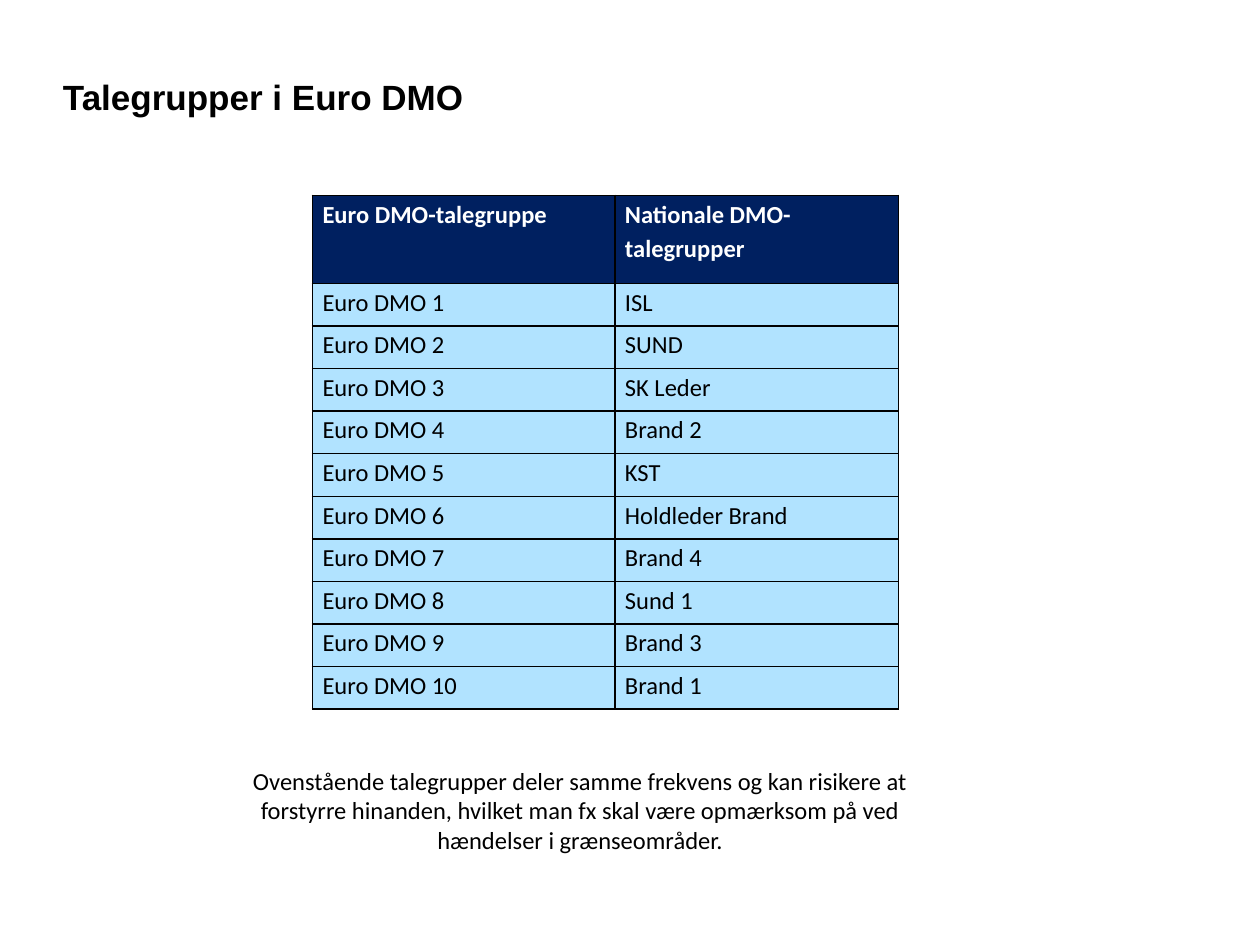
"""Build a slide listing the Euro DMO talk groups and their national counterparts."""
from dataclasses import dataclass

from lxml import etree
from pptx import Presentation
from pptx import util as u
from pptx.dml.color import RGBColor
from pptx.enum import text
from pptx.oxml.ns import qn

COLOURS = {"ink": "000000", "white": "FFFFFF", "navy": "002060", "sky": "B1E3FF"}
HEADINGS = ("Euro DMO-talegruppe", "Nationale DMO-talegrupper")
NATIONAL_GROUPS = (
    "ISL", "SUND", "SK Leder", "Brand 2", "KST",
    "Holldeder Brand".replace("Holldeder", "Holdleder"), "Brand 4", "Sund 1", "Brand 3", "Brand 1",
)
COLUMN_WIDTHS = (2.4, 2.25)
TABLE_HEIGHT = 4.08
HEADER_HEIGHT = 0.7


@dataclass(frozen=True)
class Area:
    left: float
    top: float
    width: float
    height: float

    def lengths(self):
        return [u.Inches(side) for side in (self.left, self.top, self.width, self.height)]


@dataclass(frozen=True)
class RowStyle:
    fill: str
    colour: str
    bold: bool


HEADER_STYLE = RowStyle("navy", "white", True)
BODY_STYLE = RowStyle("sky", "ink", False)


def write(frame, words: str, *, size=14, font="Calibri", colour="ink", bold=False,
          align=text.PP_ALIGN.LEFT, line_spacing=1.0) -> None:
    frame.word_wrap = True
    para = frame.paragraphs[0]
    para.alignment = align
    para.line_spacing = line_spacing
    span = para.add_run()
    span.text = words
    span.font.size = u.Pt(size)
    span.font.name = font
    span.font.bold = bold
    span.font.color.rgb = RGBColor.from_string(COLOURS[colour])


def add_text(page, area: Area, words: str, **style) -> None:
    frame = page.shapes.add_textbox(*area.lengths()).text_frame
    frame.margin_left = frame.margin_top = frame.margin_right = frame.margin_bottom = 0
    frame.vertical_anchor = text.MSO_ANCHOR.TOP
    write(frame, words, **style)


def add_borders(cell) -> None:
    properties = cell._tc.get_or_add_tcPr()
    for index, side in enumerate(("lnL", "lnR", "lnT", "lnB")):
        line = etree.Element(qn(f"a:{side}"), w=str(u.Pt(1)))
        fill = etree.SubElement(line, qn("a:solidFill"))
        etree.SubElement(fill, qn("a:srgbClr"), val=COLOURS["ink"])
        properties.insert(index, line)


def fill_cell(cell, words: str, style: RowStyle) -> None:
    cell.margin_left = cell.margin_right = u.Inches(0.08)
    cell.margin_top = cell.margin_bottom = 0
    cell.vertical_anchor = text.MSO_ANCHOR.TOP
    cell.fill.solid()
    cell.fill.fore_color.rgb = RGBColor.from_string(COLOURS[style.fill])
    add_borders(cell)
    write(cell.text_frame, words, colour=style.colour, bold=style.bold, line_spacing=1.15)


def add_group_table(page) -> None:
    groups = [(f"Euro DMO {number}", name) for number, name in enumerate(NATIONAL_GROUPS, 1)]
    rows = [HEADINGS, *groups]
    area = Area(2.48, 1.55, sum(COLUMN_WIDTHS), TABLE_HEIGHT)
    table = page.shapes.add_table(len(rows), len(HEADINGS), *area.lengths()).table
    table.horz_banding = False
    for column, width in zip(table.columns, COLUMN_WIDTHS):
        column.width = u.Inches(width)
    body_height = (TABLE_HEIGHT - HEADER_HEIGHT) / len(groups)
    for index, (row, entries) in enumerate(zip(table.rows, rows)):
        row.height = u.Inches(body_height if index else HEADER_HEIGHT)
        for cell, words in zip(row.cells, entries):
            fill_cell(cell, words, BODY_STYLE if index else HEADER_STYLE)


def main() -> None:
    deck = Presentation()
    deck.slide_width, deck.slide_height = u.Inches(10), u.Inches(7.5)
    page = deck.slides.add_slide(deck.slide_layouts[6])
    add_text(page, Area(0.5, 0.6, 7.26, 0.87), "Talegrupper i Euro DMO",
             size=20, font="Arial", bold=True)
    add_group_table(page)
    add_text(page, Area(1.73, 6.08, 5.75, 0.94),
             "Ovenstående talegrupper deler samme frekvens og kan risikere at forstyrre "
             "hinanden, hvilket man fx skal være opmærksom på ved hændelser i grænseområder.",
             align=text.PP_ALIGN.CENTER)
    deck.save("out.pptx")


if __name__ == "__main__":
    main()
